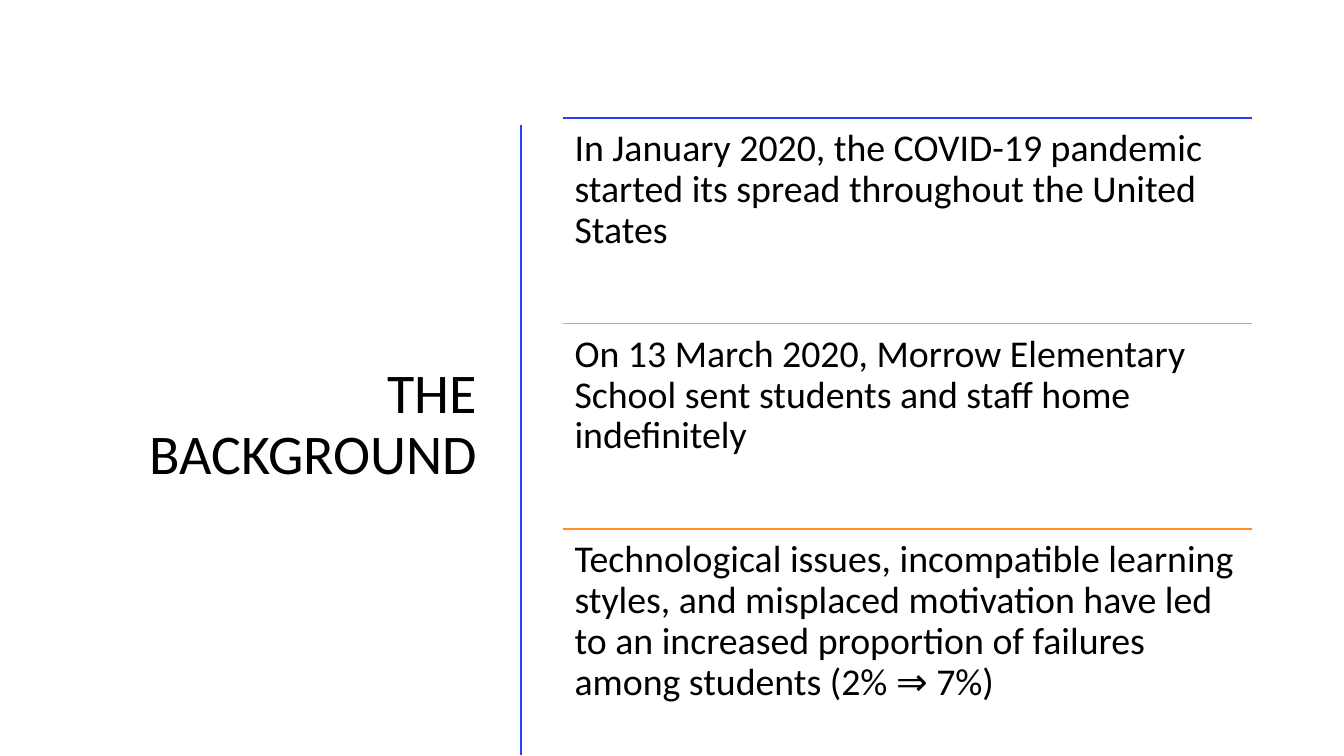
"""Build the background slide: a title, a vertical divider and three ruled statements."""
from lxml import etree
from pptx import Presentation
from pptx.dml.color import RGBColor
from pptx.enum.shapes import MSO_CONNECTOR
from pptx.enum.text import MSO_ANCHOR, MSO_AUTO_SIZE, PP_ALIGN
from pptx.oxml.ns import qn
from pptx.util import Cm, Pt

STRAIGHT = MSO_CONNECTOR.STRAIGHT
TOP, MIDDLE = MSO_ANCHOR.TOP, MSO_ANCHOR.MIDDLE
LEFT, RIGHT = PP_ALIGN.LEFT, PP_ALIGN.RIGHT
NO_AUTOFIT = MSO_AUTO_SIZE.NONE
TITLE_ONLY = 5

FONT = "Calibri"
COLOURS = {"text": "000000", "blue": "243FFF", "pink": "FF83B6", "orange": "FF9022"}

CONTENT_TOP = 2.97
DIVIDER_X = 13.13
STATEMENT_LEFT = 14.2
STATEMENT_WIDTH = 17.35
STATEMENT_HEIGHT = 5.18
STATEMENT_INSET = Cm(0.28)

STATEMENTS = [
    ("blue", "In January 2020, the COVID-19 pandemic started its spread "
             "throughout the United States"),
    ("pink", "On 13 March 2020, Morrow Elementary School sent students and "
             "staff home indefinitely"),
    ("orange", "Technological issues, incompatible learning styles, and misplaced "
               "motivation have led to an increased proportion of failures among "
               "students (2% ⇒ 7%)"),
]


def set_attributes(target, values):
    """Set each named attribute on the target."""
    for name, value in values.items():
        setattr(target, name, value)


def write_text(shape, text, size, alignment, frame_format):
    """Fill a shape with one formatted paragraph."""
    frame = shape.text_frame
    frame.text = text
    set_attributes(frame, {"word_wrap": True, "auto_size": NO_AUTOFIT, **frame_format})
    paragraph = frame.paragraphs[0]
    set_attributes(paragraph, {"alignment": alignment, "line_spacing": 0.9})
    font = paragraph.runs[0].font
    set_attributes(font, {"name": FONT, "size": Pt(size)})
    font.color.rgb = RGBColor.from_string(COLOURS["text"])


def add_line(slide, start, end, colour, width):
    """Draw a straight line between two points given in centimetres."""
    points = [Cm(value) for value in (*start, *end)]
    connector = slide.shapes.add_connector(STRAIGHT, *points)
    connector.line.color.rgb = RGBColor.from_string(COLOURS[colour])
    connector.line.width = Pt(width)
    etree.SubElement(connector._element.spPr, qn("a:effectLst"))


def add_title(slide, text):
    """Place the title at the left of the divider."""
    title = slide.shapes.title
    set_attributes(title, {"left": Cm(1.32), "top": Cm(CONTENT_TOP),
                           "width": Cm(10.95), "height": Cm(15.52)})
    write_text(title, text, 40, RIGHT, {"vertical_anchor": MIDDLE})


def add_statement(slide, index, colour, text):
    """Add a statement under its coloured rule."""
    top = CONTENT_TOP + index * STATEMENT_HEIGHT
    right = STATEMENT_LEFT + STATEMENT_WIDTH
    add_line(slide, (STATEMENT_LEFT, top), (right, top), colour, 1)
    box = slide.shapes.add_textbox(Cm(STATEMENT_LEFT), Cm(top),
                                   Cm(STATEMENT_WIDTH), Cm(STATEMENT_HEIGHT))
    margins = {f"margin_{side}": STATEMENT_INSET
               for side in ("left", "top", "right", "bottom")}
    write_text(box, text, 27, LEFT, {"vertical_anchor": TOP, **margins})


def main():
    """Build and save the presentation."""
    presentation = Presentation()
    set_attributes(presentation, {"slide_width": Cm(33.87), "slide_height": Cm(19.05)})
    slide = presentation.slides.add_slide(presentation.slide_layouts[TITLE_ONLY])
    add_title(slide, "THE BACKGROUND")
    add_line(slide, (DIVIDER_X, 3.15), (DIVIDER_X, 19.03), "blue", 2)
    for index, (colour, text) in enumerate(STATEMENTS):
        add_statement(slide, index, colour, text)
    presentation.save("out.pptx")


if __name__ == "__main__":
    main()
